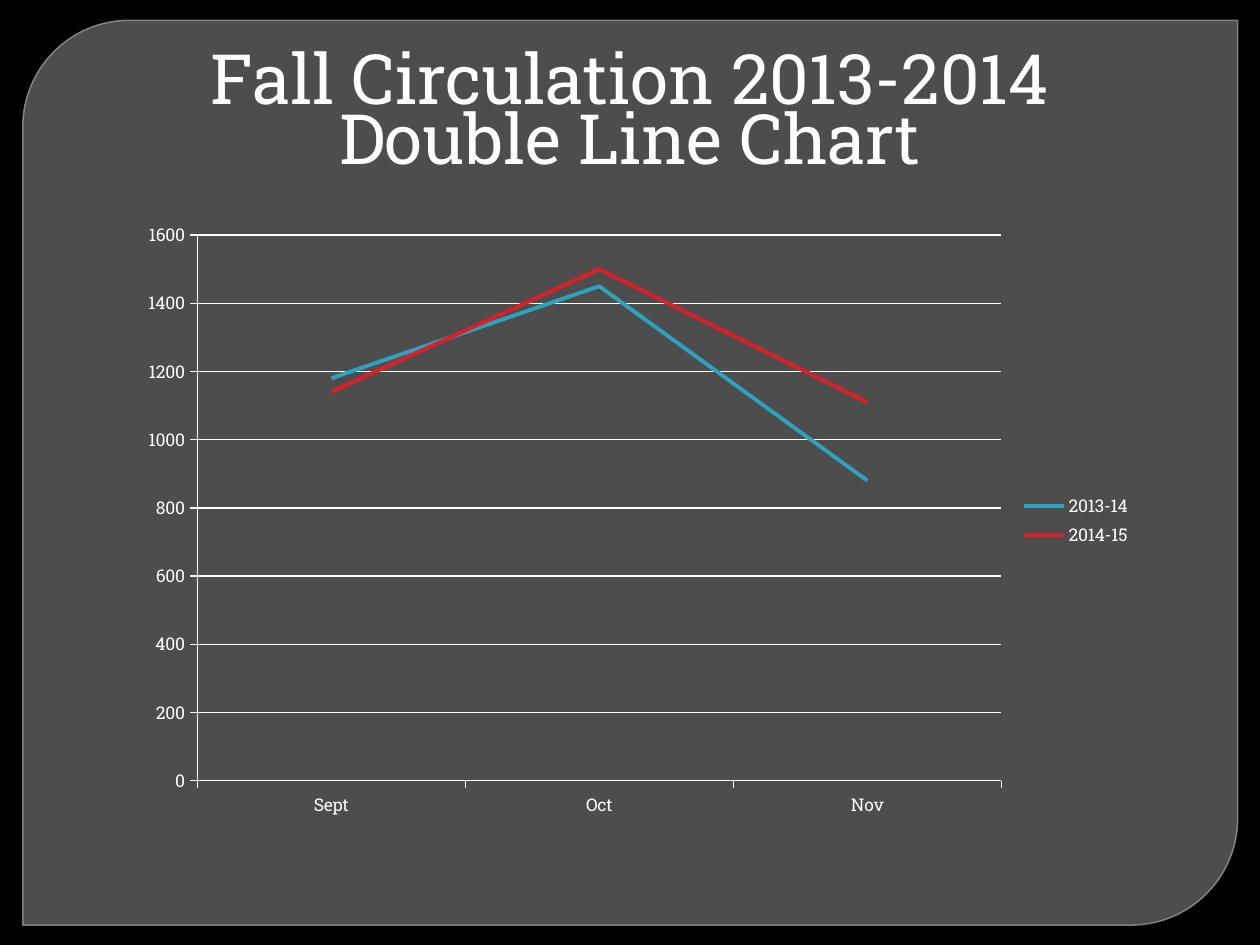
from lxml import etree
from pptx import Presentation
from pptx.chart.data import CategoryChartData
from pptx.dml.color import RGBColor
from pptx.enum.chart import XL_CHART_TYPE as CT, XL_LEGEND_POSITION as LP, XL_TICK_MARK as TM
from pptx.enum.shapes import MSO_SHAPE
from pptx.enum.text import MSO_ANCHOR, PP_ALIGN
from pptx.oxml import parse_xml
from pptx.oxml.ns import nsdecls, qn
from pptx.util import Cm, Pt

COLORS = {"back": "000000", "panel": "777777", "edge": "8E8E8E", "text": "FFFFFF",
          "2013-14": "2DA2BF", "2014-15": "DA1F28"}
FONT = "Roboto Slab"


def rgb(name):
    return RGBColor.from_string(COLORS[name])


def set_alpha(fill, percent):
    color = fill._xPr.find(qn("a:solidFill"))[0]
    etree.SubElement(color, qn("a:alpha")).set("val", str(percent * 1000))


prs = Presentation()
prs.slide_width, prs.slide_height = Cm(25.4), Cm(19.05)
s = prs.slides.add_slide(prs.slide_layouts[5])
s.background.fill.solid()
s.background.fill.fore_color.rgb = rgb("back")

# Panel with two rounded corners, behind everything else
panel = s.shapes.add_shape(MSO_SHAPE.ROUND_2_DIAG_RECTANGLE,
                           Cm(0.46), Cm(0.41), Cm(24.49), Cm(18.24))
panel.adjustments[0], panel.adjustments[1] = 0.118, 0
panel.shadow.inherit = False
panel.fill.solid()
panel.fill.fore_color.rgb = rgb("panel")
set_alpha(panel.fill, 65)
panel.line.width = Pt(0.87)
panel.line.color.rgb = rgb("edge")
set_alpha(panel.line.fill, 88)
s.shapes._spTree.insert(2, panel._element)

# Title
title = s.shapes.title
title.left, title.top, title.width, title.height = Cm(1.27), Cm(0.76), Cm(22.86), Cm(3.18)
tf = title.text_frame
tf.word_wrap = True
tf.vertical_anchor = MSO_ANCHOR.MIDDLE
p = tf.paragraphs[0]
p.text = "Fall Circulation 2013-2014\vDouble Line Chart"
p.alignment = PP_ALIGN.CENTER
p.line_spacing = 0.72
for r in p.runs:
    r.font.size, r.font.name = Pt(39.6), FONT
    r.font.color.rgb = rgb("text")

# Line chart
data = CategoryChartData()
data.categories = ["Sept", "Oct", "Nov"]
data.add_series("2013-14", [1180, 1450, 880])
data.add_series("2014-15", [1140, 1500, 1110])
chart = s.shapes.add_chart(CT.LINE, Cm(2.54), Cm(4.24), Cm(20.52), Cm(12.5), data).chart
chart.has_title = False
chart.font.size, chart.font.name = Pt(10), FONT
chart.font.color.rgb = rgb("text")
chart.has_legend = True
chart.legend.position = LP.RIGHT
chart.legend.include_in_layout = False

plot = chart.plots[0]
plot.vary_by_categories = False
for series in plot.series:
    series.smooth = False
    series.format.line.width = Pt(2.25)
    series.format.line.color.rgb = rgb(series.name)

# Axes and gridlines
values = chart.value_axis
values.minimum_scale, values.maximum_scale, values.major_unit = 0, 1600, 200
values.has_major_gridlines = True
for axis in (chart.category_axis, values):
    axis.major_tick_mark, axis.minor_tick_mark = TM.OUTSIDE, TM.NONE
for part in (chart.category_axis, values, values.major_gridlines):
    part.format.line.width = Pt(0.75)
    part.format.line.color.rgb = rgb("text")

# Fixed plot area, as shares of the chart
area = {"x": 0.07, "y": 0.04, "w": 0.79, "h": 0.88}
marks = "".join(f'<c:{k}Mode val="edge"/>' for k in "xy")
marks += "".join(f'<c:{k} val="{v}"/>' for k, v in area.items())
plot_area = chart._chartSpace.chart.plotArea
for old in plot_area.findall(qn("c:layout")):
    plot_area.remove(old)
plot_area.insert(0, parse_xml(
    f'<c:layout {nsdecls("c")}><c:manualLayout><c:layoutTarget val="inner"/>'
    f'{marks}</c:manualLayout></c:layout>'))

prs.save("out.pptx")
